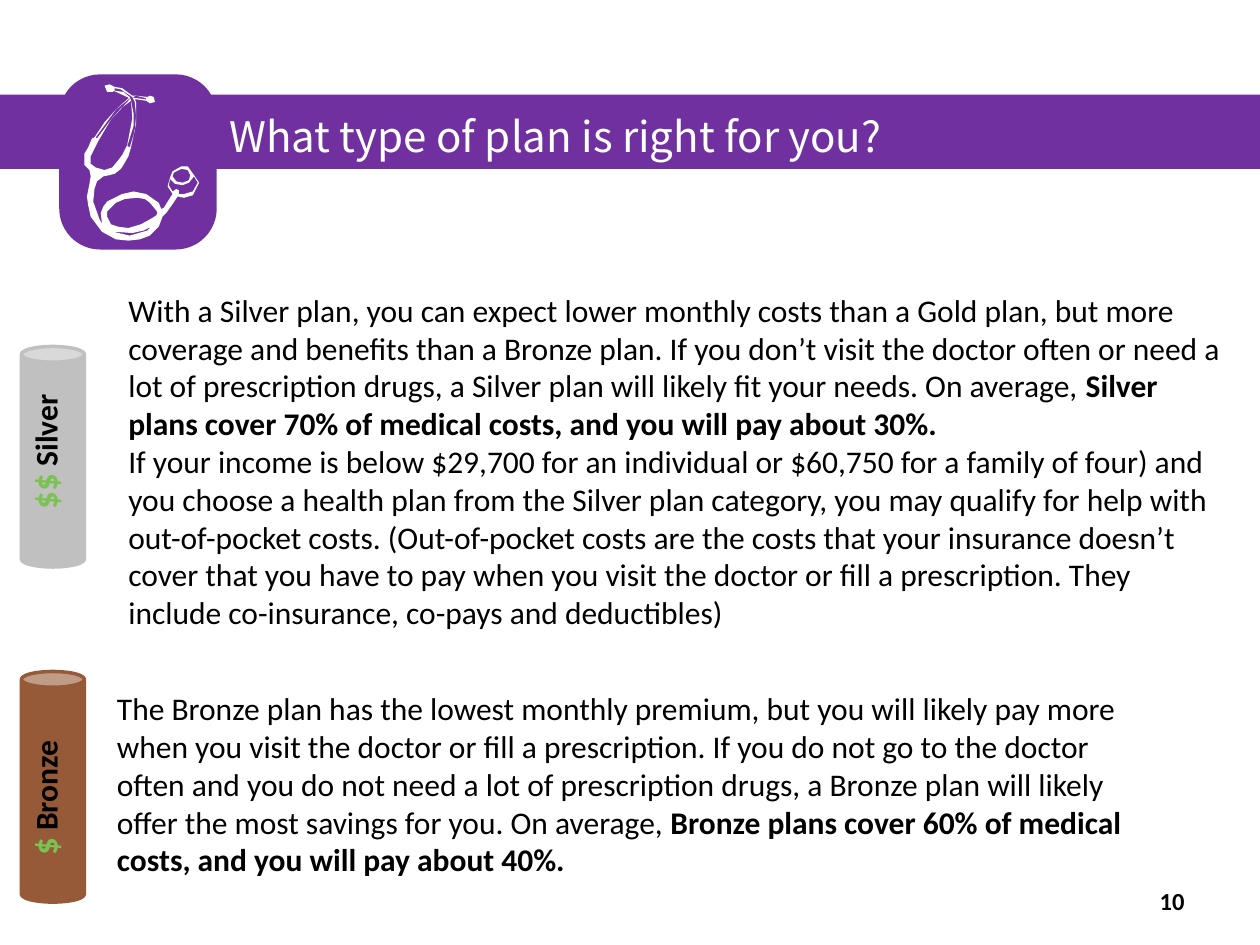
"""Build the slide that compares Silver and Bronze health plans."""
import dataclasses
import typing

import pptx
import pptx.dml.color
import pptx.enum.shapes
import pptx.enum.text
import pptx.util

Inches = pptx.util.Inches
KINDS = pptx.enum.shapes.MSO_SHAPE
FIT = pptx.enum.text.MSO_AUTO_SIZE
ANCHOR = pptx.enum.text.MSO_ANCHOR
ALIGN = pptx.enum.text.PP_ALIGN

COLORS = {
    "purple": "7030A0",
    "white": "FFFFFF",
    "black": "000000",
    "green": "7BC252",
    "silver": "C0C0C0",
    "bronze": "965A38",
}

TUBE = [
    (154, 139), (149, 132), (144, 132), (137, 136), (135, 141), (133, 148), (137, 154), (135, 157),
    (130, 165), (128, 166), (126, 161), (116, 154), (106, 152), (97, 154), (85, 160), (82, 164),
    (80, 169), (81, 178), (79, 174), (74, 160), (75, 150), (77, 144), (82, 140), (87, 139),
    (91, 138), (96, 134), (98, 131), (102, 124), (104, 117), (108, 98), (108, 81), (107, 79),
    (109, 79), (116, 80), (119, 82), (123, 81), (122, 77), (119, 76), (117, 77), (108, 76),
    (105, 76), (97, 70), (91, 69), (87, 67), (83, 68), (85, 73), (90, 73), (90, 72),
    (103, 78), (92, 87), (83, 97), (75, 109), (73, 110), (70, 117), (67, 122), (67, 131),
    (71, 135), (72, 140), (71, 146), (69, 156), (70, 163), (72, 172), (81, 184), (92, 190),
    (102, 191), (111, 190), (119, 187), (126, 180), (129, 172), (132, 169), (137, 162), (141, 156),
    (146, 157), (153, 155), (158, 145),
]
HOLES = [
    [(108, 76), (116, 78), (116, 79), (109, 78), (106, 78), (106, 77)],
    [(91, 72), (91, 70), (96, 71), (105, 77), (107, 81), (108, 92), (107, 104), (103, 117),
     (101, 116), (106, 100), (106, 90), (104, 80), (103, 77), (98, 73)],
    [(84, 98), (92, 87), (102, 78), (103, 79), (102, 80), (88, 95), (77, 110), (76, 109)],
    [(72, 124), (74, 120), (78, 112), (88, 95), (96, 86), (104, 80), (105, 94), (101, 115),
     (97, 123), (94, 127), (89, 133), (83, 135), (76, 133), (72, 130)],
    [(120, 180), (117, 183), (103, 187), (90, 184), (92, 184), (105, 185), (114, 183)],
    [(124, 171), (121, 173), (112, 178), (102, 181), (94, 180), (88, 178), (85, 172), (85, 168),
     (92, 161), (99, 158), (109, 157), (115, 158), (119, 161), (124, 167), (125, 169)],
    [(137, 140), (138, 137), (144, 134), (149, 135), (151, 139), (150, 143), (145, 145), (140, 144)],
    [(146, 154), (142, 154), (142, 151), (140, 150), (137, 152), (134, 147), (135, 142), (139, 146),
     (145, 147), (150, 145), (154, 140), (157, 145), (153, 152)],
]


@dataclasses.dataclass
class Box:
    left: float
    top: float
    width: float
    height: float

    def spans(self) -> list[int]:
        return [Inches(n) for n in (self.left, self.top, self.width, self.height)]


@dataclasses.dataclass
class Span:
    text: str
    size: float = 18
    bold: bool = False
    color: str = "black"
    font: str = "Calibri"


@dataclasses.dataclass
class Plan:
    name: str
    price: str
    color: str
    can: Box
    label: Box
    body: Box
    spans: list[Span]


PLANS = [
    Plan("Silver", "$$", "silver", Box(0.17, 2.75, 0.5, 1.75), Box(0.13, 2.33, 0.54, 1.81),
         Box(0.92, 2.26, 8.92, 2.83), [
        Span("With a Silver plan, you can expect lower monthly costs than a Gold plan, but more "
             "coverage and benefits than a Bronze plan. If you don’t visit the doctor often or "
             "need a lot of prescription drugs, a Silver plan will likely fit your needs. "
             "On average, "),
        Span("Silver plans cover 70% of medical costs, and you will pay about 30%.\n", bold=True),
        Span("If your income is below $29,700 for an individual or $60,750 for a family of four) "
             "and you choose a health plan from the Silver plan category, you may qualify for "
             "help with out-of-pocket costs. (Out-of-pocket costs are the costs that your "
             "insurance doesn’t cover that you have to pay when you visit the doctor or fill a "
             "prescription. They include co-insurance, co-pays and deductibles)")]),
    Plan("Bronze", "$", "bronze", Box(0.17, 5.33, 0.5, 1.83), Box(0.13, 5.08, 0.54, 1.81),
         Box(0.83, 5.42, 8.33, 1.62), [
        Span("The Bronze plan has the lowest monthly premium, but you will likely pay more when "
             "you visit the doctor or fill a prescription. If you do not go to the doctor often "
             "and you do not need a lot of prescription drugs, a Bronze plan will likely offer "
             "the most savings for you. On average, "),
        Span("Bronze plans cover 60% of medical costs, and you will pay about 40%.", bold=True)]),
]


def tint(name: str) -> pptx.dml.color.RGBColor:
    return pptx.dml.color.RGBColor.from_string(COLORS[name])


def paint(shape: typing.Any, color: str, edge: float = 0) -> None:
    shape.shadow.inherit = False
    shape.fill.solid()
    shape.fill.fore_color.rgb = tint(color)
    if edge:
        shape.line.color.rgb = tint(color)
        shape.line.width = pptx.util.Pt(edge)
    else:
        shape.line.fill.background()


def style(run: typing.Any, span: Span) -> None:
    run.font.name = span.font
    run.font.size = pptx.util.Pt(span.size)
    run.font.bold = span.bold
    run.font.color.rgb = tint(span.color)


def write(slide: typing.Any, box: Box, spans: list[Span]) -> typing.Any:
    frame = slide.shapes.add_textbox(*box.spans()).text_frame
    frame.word_wrap = True
    frame.auto_size = FIT.SHAPE_TO_FIT_TEXT
    line = frame.paragraphs[0]
    for span in spans:
        run = line.add_run()
        run.text = span.text.rstrip("\n")
        style(run, span)
        if span.text.endswith("\n"):
            line.add_line_break()
    return frame


def draw_head(slide: typing.Any) -> None:
    band = slide.shapes.add_shape(KINDS.RECTANGLE, *Box(-0.5, 0.75, 10.92, 0.59).spans())
    paint(band, "purple")
    badge = slide.shapes.add_shape(KINDS.ROUNDED_RECTANGLE, *Box(0.47, 0.59, 1.25, 1.39).spans())
    badge.adjustments[0] = 0.26
    paint(badge, "purple")
    pen = slide.shapes.build_freeform(*TUBE[0], scale=Inches(0.01))
    pen.add_line_segments(TUBE[1:])
    for hole in HOLES:
        pen.move_to(*hole[0])
        pen.add_line_segments(hole[1:])
    paint(pen.convert_to_shape(), "white")

    title = slide.shapes.title
    slide.shapes._spTree.append(title._element)
    title.left, title.top, title.width, title.height = Box(1.72, 0.83, 8.44, 0.5).spans()
    frame = title.text_frame
    frame.text = "What type of plan is right for you?"
    frame.word_wrap = True
    frame.auto_size = FIT.NONE
    frame.vertical_anchor = ANCHOR.TOP
    line = frame.paragraphs[0]
    line.alignment = ALIGN.LEFT
    style(line.runs[0], Span(frame.text, 24, color="white", font="Noto Sans CJK JP"))


def draw_plan(slide: typing.Any, plan: Plan) -> None:
    can = slide.shapes.add_shape(KINDS.CAN, *plan.can.spans())
    paint(can, plan.color, 2)
    label = write(slide, plan.label, [Span(plan.price, 20, True, "green"),
                                      Span(f" {plan.name}", bold=True)])
    label._txBody.bodyPr.set("vert", "vert270")
    write(slide, plan.body, plan.spans)


def main() -> None:
    deck = pptx.Presentation()
    deck.slide_width, deck.slide_height = Inches(10), Inches(7.5)
    slide = deck.slides.add_slide(deck.slide_layouts[5])
    draw_head(slide)
    for plan in PLANS:
        draw_plan(slide, plan)
    page = write(slide, Box(7.17, 6.95, 2.33, 0.4), [Span("10", 14, True)])
    page.auto_size = FIT.NONE
    page.vertical_anchor = ANCHOR.MIDDLE
    page.paragraphs[0].alignment = ALIGN.RIGHT
    deck.save("out.pptx")


if __name__ == "__main__":
    main()
